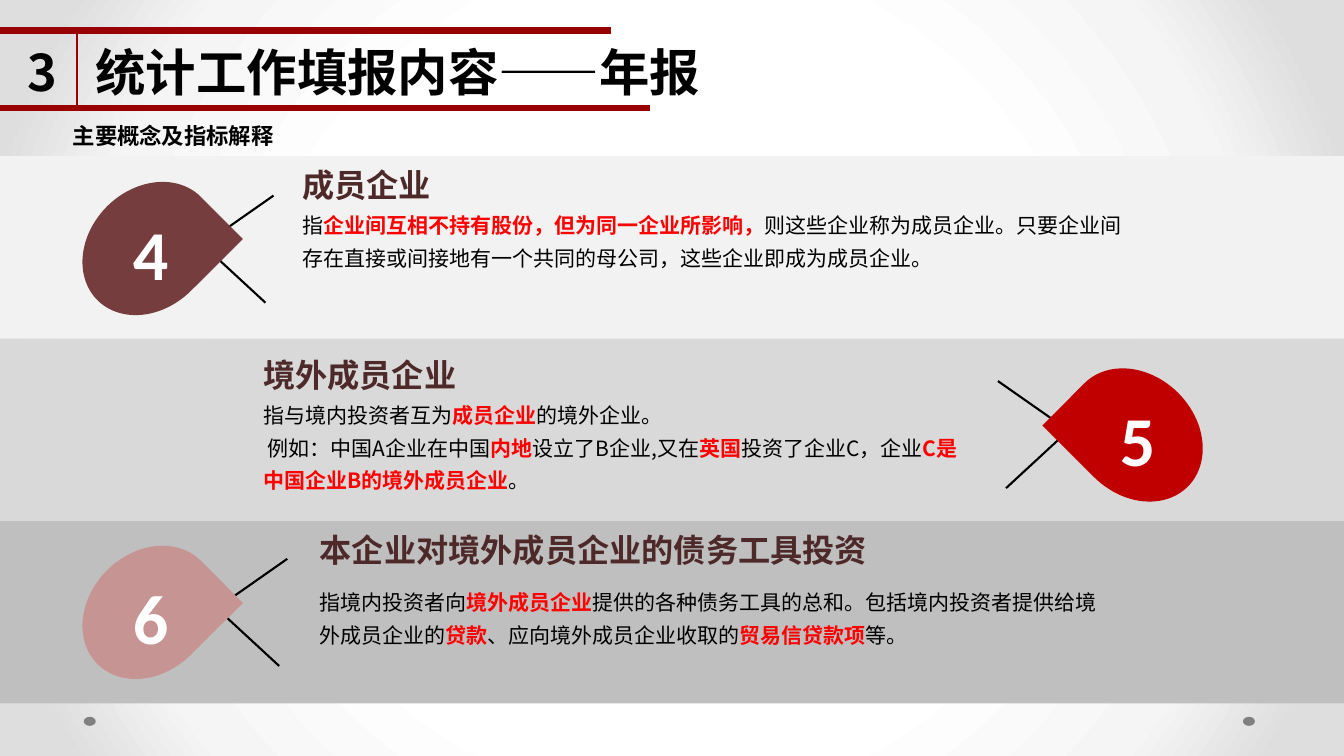
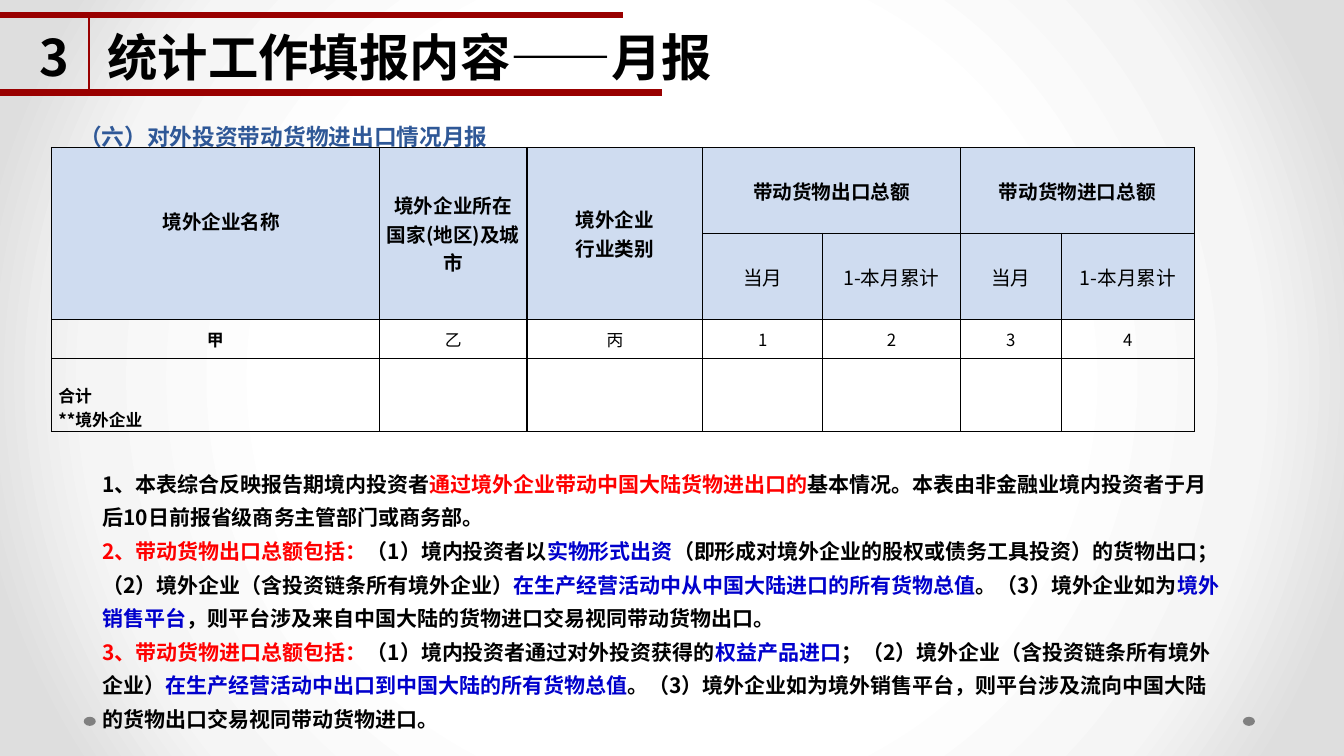
from lxml import etree
from pptx import Presentation
from pptx.dml.color import RGBColor
from pptx.enum.shapes import MSO_CONNECTOR, MSO_SHAPE
from pptx.enum.text import MSO_ANCHOR, PP_ALIGN
from pptx.oxml import parse_xml
from pptx.oxml.ns import nsdecls, qn
from pptx.util import Pt

LINE = MSO_CONNECTOR.STRAIGHT
RECT, OVAL, TEAR = MSO_SHAPE.RECTANGLE, MSO_SHAPE.OVAL, MSO_SHAPE.TEAR
MIDDLE, BOTTOM = MSO_ANCHOR.MIDDLE, MSO_ANCHOR.BOTTOM
LEFT, CENTER = PP_ALIGN.LEFT, PP_ALIGN.CENTER


class Theme:
    sans, serif, digit = "Noto Sans CJK SC", "TeX Gyre Pagella", "Calibri"
    black, white, red, blue = "000000", "FFFFFF", "FF0000", "0000CC"
    rule, dot, head, topic, cell = "990000", "808080", "4E2929", "2F5897", "CFDCF0"
    glow = ((50, "FFFFFF"), (76, "F5F5F5"), (92, "DEDEDE"))
    title, mark, name, sub, body = 36, 50, 23, 16, 15
    table, small, topic_size = 14, 12, 16.2
    pad = (8, 4.1)


def draw_line(slide, start, end, color, width):
    line = slide.shapes.add_connector(LINE, *[Pt(v) for v in (*start, *end)])
    line.line.color.rgb = RGBColor.from_string(color)
    line.line.width = Pt(width)
    etree.SubElement(line.element.find(qn("p:spPr")), qn("a:effectLst"))


def write(frame, paras, size, color=Theme.black, bold=False, font=Theme.sans,
          align=LEFT, space=None, pad=None):
    frame.word_wrap = True
    if pad:
        frame.margin_left = frame.margin_right = Pt(pad[0])
        frame.margin_top = frame.margin_bottom = Pt(pad[1])
    for i, parts in enumerate(paras):
        para = frame.add_paragraph() if i else frame.paragraphs[0]
        para.alignment = align
        para.line_spacing = space
        for part in [parts] if isinstance(parts, str) else parts:
            plain = isinstance(part, str)
            run = para.add_run()
            run.text = part if plain else part[0]
            run.font.name = font
            run.font.size = Pt(size)
            run.font.bold = bold or not plain
            run.font.color.rgb = RGBColor.from_string(color if plain else part[1])


deck = Presentation()
deck.slide_width, deck.slide_height = Pt(960), Pt(540)

master = deck.slide_master
master.background.fill.gradient()
grad = master.element.find(".//" + qn("a:gradFill"))
stops = "".join(f'<a:gs pos="{pos * 1000}"><a:srgbClr val="{color}"/></a:gs>'
                for pos, color in Theme.glow)
grad.getparent().replace(grad, parse_xml(
    f'<a:gradFill {nsdecls("a")} rotWithShape="1"><a:gsLst>{stops}</a:gsLst>'
    '<a:path path="circle"><a:fillToRect l="50000" t="50000" r="50000" b="50000"/>'
    '</a:path></a:gradFill>'))

slides = []
for title, dx, dy in (("统计工作填报内容——年报", 0, 0),
                      ("统计工作填报内容——月报", 8.4, -10.9)):
    slide = deck.slides.add_slide(deck.slide_layouts[6])
    slides.append(slide)
    for x in (59.8, 887.8):
        dot = slide.shapes.add_shape(OVAL, Pt(x), Pt(512), Pt(8.6), Pt(6.5))
        dot.shadow.inherit = False
        dot.fill.solid()
        dot.fill.fore_color.rgb = RGBColor.from_string(Theme.dot)
        dot.line.fill.background()
    for x1, y1, x2, y2, width in ((55.2, 21, 55.2, 77, 1.5),
                                  (-15, 21.7, 436.4, 21.7, 4.5),
                                  (-15, 77, 464.6, 77, 4.5)):
        draw_line(slide, (x1 + dx, y1 + dy), (x2 + dx, y2 + dy), Theme.rule, width)
    for text, x, w in (("3", 12.4, 32.4), (title, 61.2, 456.5)):
        box = slide.shapes.add_textbox(Pt(x + dx), Pt(26 + dy), Pt(w), Pt(51))
        write(box.text_frame, [text], Theme.title, bold=True)

year, month = slides

box = year.shapes.add_textbox(Pt(44), Pt(82.8), Pt(872), Pt(39.6))
write(box.text_frame, ["主要概念及指标解释"], Theme.sub, bold=True, pad=Theme.pad)

RED, BLUE = Theme.red, Theme.blue
bands = (
    dict(fill="F2F2F2", drop="753D3D", mark="4", side=1, at=(64, 125.3),
         tip=(145, 175), name="成员企业", x=208, y=113.8, w=604, gap=28.8,
         text=[["指", ("企业间互相不持有股份，但为同一企业所影响，", RED),
                "则这些企业称为成员企业。只要企业间存在直接或间接地有一个共同的母公司，"
                "这些企业即成为成员企业。"]]),
    dict(fill="D9D9D9", drop="C00000", mark="5", side=-1, at=(769, 258.5),
         tip=(763.2, 307.5), name="境外成员企业", x=180, y=249.8, w=518.4, gap=28.1,
         text=[["指与境内投资者互为", ("成员企业", RED), "的境外企业。"],
               [" 例如：中国A企业在中国", ("内地", RED), "设立了B企业,又在",
                ("英国", RED), "投资了企业C，企业",
                ("C是中国企业B的境外成员企业", RED), "。"]]),
    dict(fill="BFBFBF", drop="C79494", mark="6", side=1, at=(64, 385.2),
         tip=(154.8, 434.5), name="本企业对境外成员企业的债务工具投资",
         x=220.3, y=374.4, w=572.4, gap=37.4,
         text=[["指境内投资者向", ("境外成员企业", RED),
                "提供的各种债务工具的总和。包括境内投资者提供给境外成员企业的",
                ("贷款", RED), "、应向境外成员企业收取的", ("贸易信贷款项", RED), "等。"]]),
)
step = 130.3
for i, band in enumerate(bands):
    x, y = band["at"]
    tip, side = band["tip"], band["side"]
    parts = []
    for kind, box, color in ((RECT, (0, 111.6 + i * step, 960, step), band["fill"]),
                             (TEAR, (x, y, 85, 104.4), band["drop"]),
                             (RECT, (x + 23.8, y + 21.4, 37.4, 67.7), band["drop"])):
        if kind == TEAR:
            for run, rise in ((50.4, -35.3), (44.6, 41.2)):
                draw_line(year, tip, (tip[0] + side * run, tip[1] + rise),
                          Theme.black, 1.5)
        part = year.shapes.add_shape(kind, *[Pt(v) for v in box])
        part.shadow.inherit = False
        part.fill.solid()
        part.fill.fore_color.rgb = RGBColor.from_string(color)
        part.line.fill.background()
        parts.append(part)
    back, drop, mark = parts
    drop.rotation = side * 45.1 % 360
    if side < 0:
        drop.element.find(".//" + qn("a:xfrm")).set("flipH", "1")
    mark.text_frame.vertical_anchor = MSO_ANCHOR.TOP
    write(mark.text_frame, [band["mark"]], Theme.mark, Theme.white, True, Theme.digit)
    box = year.shapes.add_textbox(Pt(band["x"]), Pt(band["y"]), Pt(band["w"]), Pt(36))
    write(box.text_frame, [band["name"]], Theme.name, Theme.head, True, pad=Theme.pad)
    box = year.shapes.add_textbox(Pt(band["x"]), Pt(band["y"] + band["gap"]),
                                  Pt(band["w"]), Pt(55.4))
    write(box.text_frame, band["text"], Theme.body, space=1.3, pad=Theme.pad)

box = month.shapes.add_textbox(Pt(48), Pt(62.6), Pt(864), Pt(49))
box.text_frame.vertical_anchor = BOTTOM
write(box.text_frame, ["（六）对外投资带动货物进出口情况月报"], Theme.topic_size,
      Theme.topic, True, Theme.serif, space=Pt(69), pad=(8.6, 4.3))

rows = (
    ("境外企业名称", "境外企业所在国家(地区)及城市", "境外企业\n行业类别",
     "带动货物出口总额", "", "带动货物进口总额", ""),
    ("", "", "", "当月", "1-本月累计", "当月", "1-本月累计"),
    ("甲", "乙", "丙", "1", "2", "3", "4"),
    ("合计\n**境外企业", "", "", "", "", "", ""),
)
wide = (234.3, 105.4, 125.7, 85.4, 98.6, 72.1, 95)
high = (61.4, 61.4, 27.9, 52.1)
frame = month.shapes.add_table(len(rows), len(wide), Pt(36.7), Pt(105.4),
                               Pt(sum(wide)), Pt(sum(high)))
table = frame.table
table.first_row = table.horz_banding = False
for col, w in zip(table.columns, wide):
    col.width = Pt(w)
for row, h in zip(table.rows, high):
    row.height = Pt(h)
for r, texts in enumerate(rows):
    for c, text in enumerate(texts):
        cell = table.cell(r, c)
        cell.margin_left = cell.margin_right = Pt(5)
        cell.margin_top = cell.margin_bottom = 0
        cell.vertical_anchor = MIDDLE
        if r < 2:
            cell.fill.solid()
            cell.fill.fore_color.rgb = RGBColor.from_string(Theme.cell)
        else:
            cell.fill.background()
        if text:
            write(cell.text_frame, text.split("\n"),
                  Theme.table if r < 2 else Theme.small, bold=r == 0 or c == 0,
                  align=LEFT if r == 3 else CENTER)
first, total = table.cell(0, 0), table.cell(3, 0)
first.margin_left, first.margin_bottom = Pt(13.6), Pt(18.6)
total.vertical_anchor = BOTTOM
for c in range(3):
    table.cell(0, c).merge(table.cell(1, c))
for c in (3, 5):
    table.cell(0, c).merge(table.cell(0, c + 1))
for props in frame.element.iter(qn("a:tcPr")):
    for i, edge in enumerate("LRTB"):
        props.insert(i, parse_xml(
            f'<a:ln{edge} {nsdecls("a")} w="12700"><a:solidFill>'
            f'<a:srgbClr val="{Theme.black}"/></a:solidFill></a:ln{edge}>'))

notes = [
    ["1、本表综合反映报告期境内投资者", ("通过境外企业带动中国大陆货物进出口的", RED),
     "基本情况。本表由非金融业境内投资者于月后10日前报省级商务主管部门或商务部。"],
    [("2、带动货物出口总额包括：", RED), "（1）境内投资者以", ("实物形式出资", BLUE),
     "（即形成对境外企业的股权或债务工具投资）的货物出口；"
     "（2）境外企业（含投资链条所有境外企业）",
     ("在生产经营活动中从中国大陆进口的所有货物总值", BLUE), "。（3）境外企业如为",
     ("境外销售平台", BLUE), "，则平台涉及来自中国大陆的货物进口交易视同带动货物出口。"],
    [("3、带动货物进口总额包括：", RED), "（1）境内投资者通过对外投资获得的",
     ("权益产品进口", BLUE), "；（2）境外企业（含投资链条所有境外企业）",
     ("在生产经营活动中出口到中国大陆的所有货物总值", BLUE),
     "。（3）境外企业如为境外销售平台，则平台涉及流向中国大陆的货物出口交易视同带动货物进口。"],
]
box = month.shapes.add_textbox(Pt(66), Pt(327), Pt(816.5), Pt(219.6))
write(box.text_frame, notes, Theme.body, bold=True, space=Pt(24))

for slide in slides:
    for latin in list(slide.element.iter(qn("a:latin"))):
        asian = etree.Element(qn("a:ea"))
        asian.set("typeface", Theme.sans)
        latin.addnext(asian)

deck.save("out.pptx")
